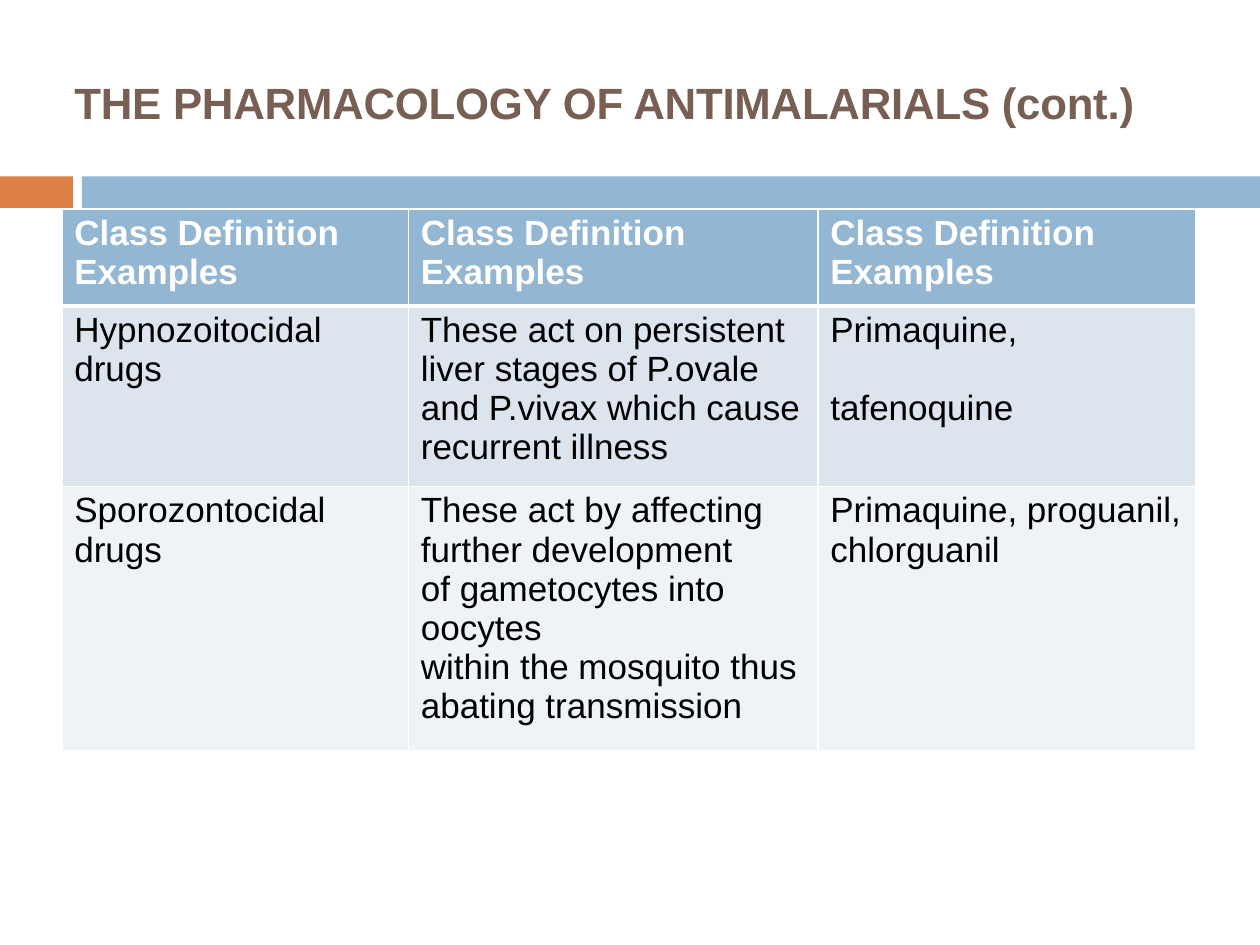
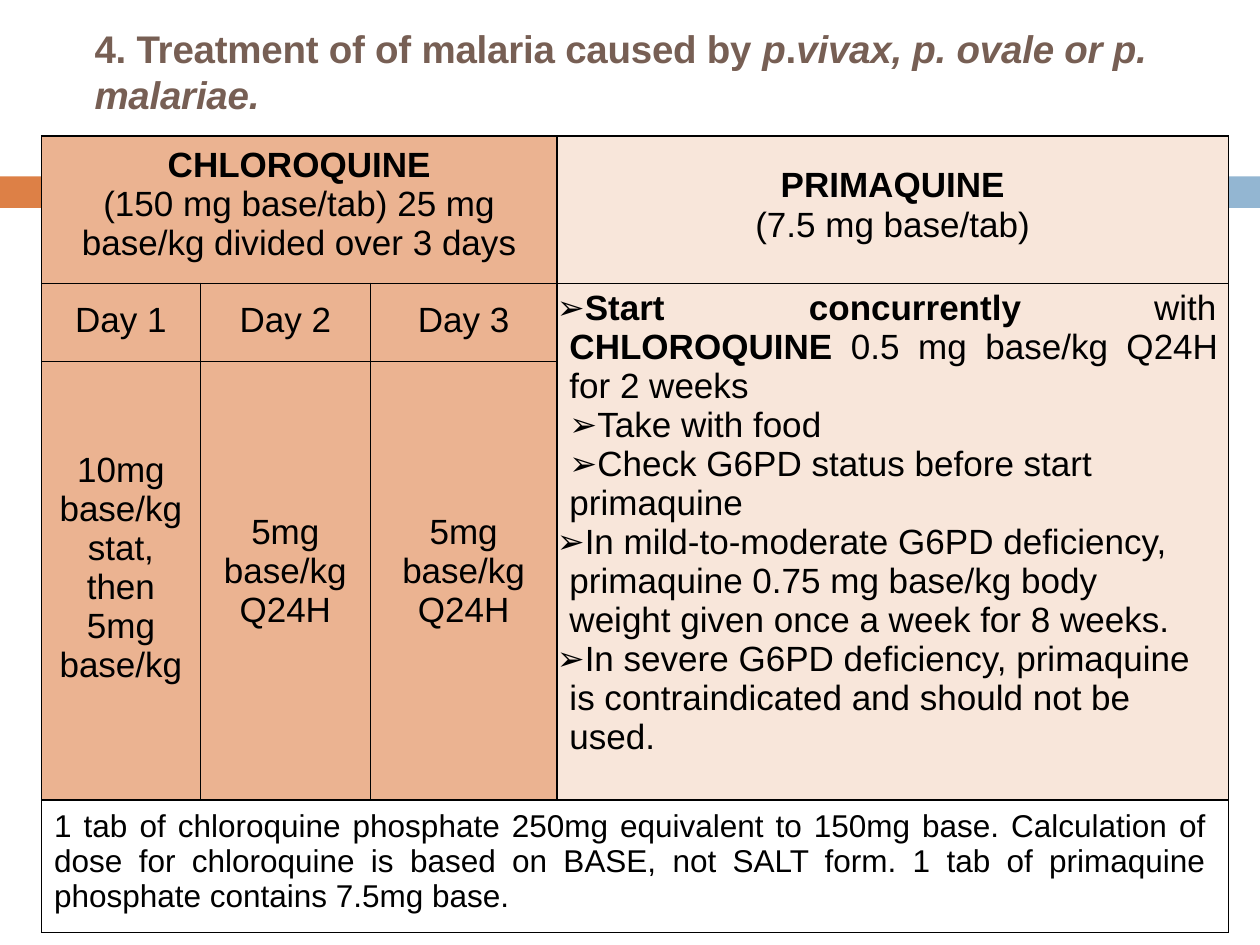
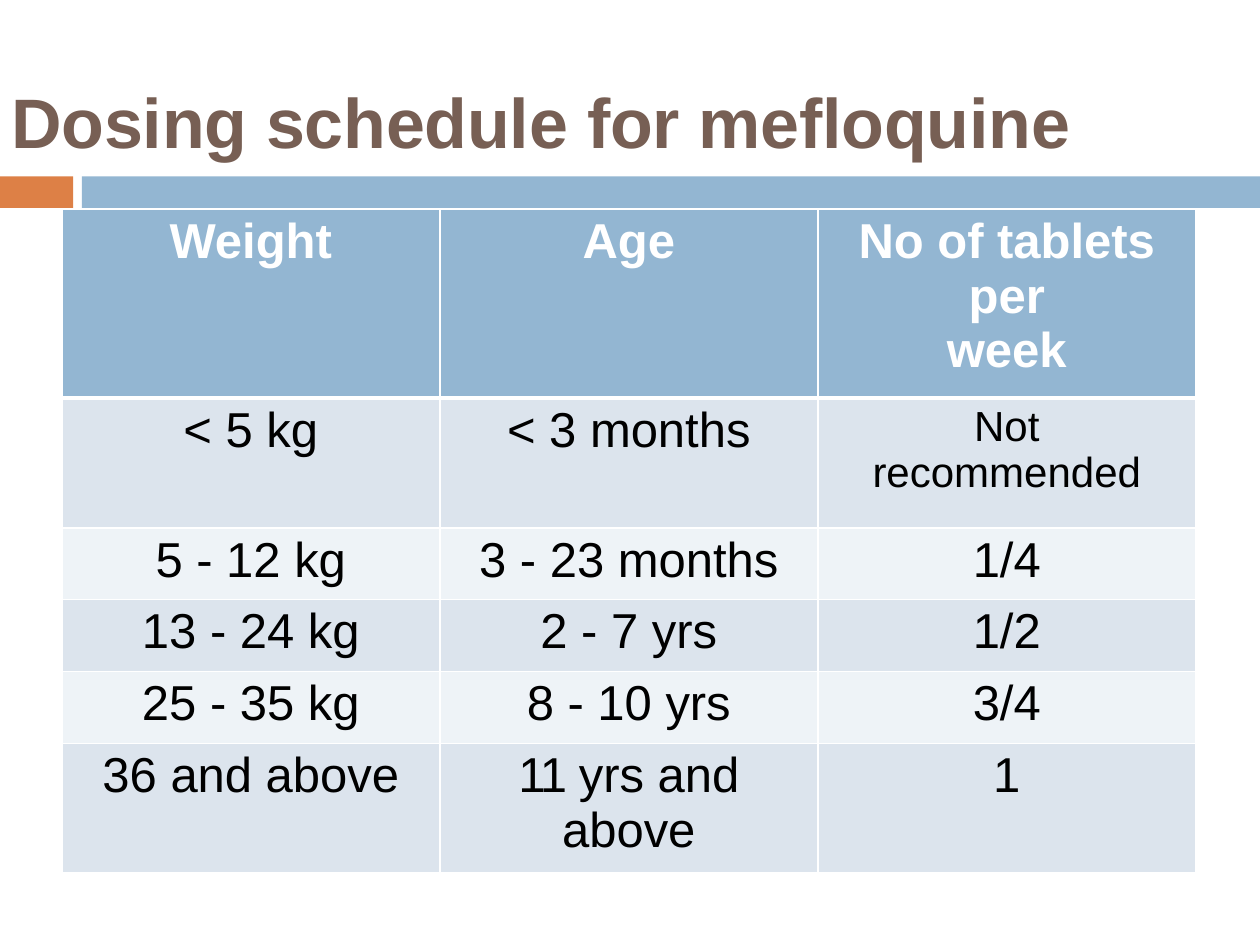
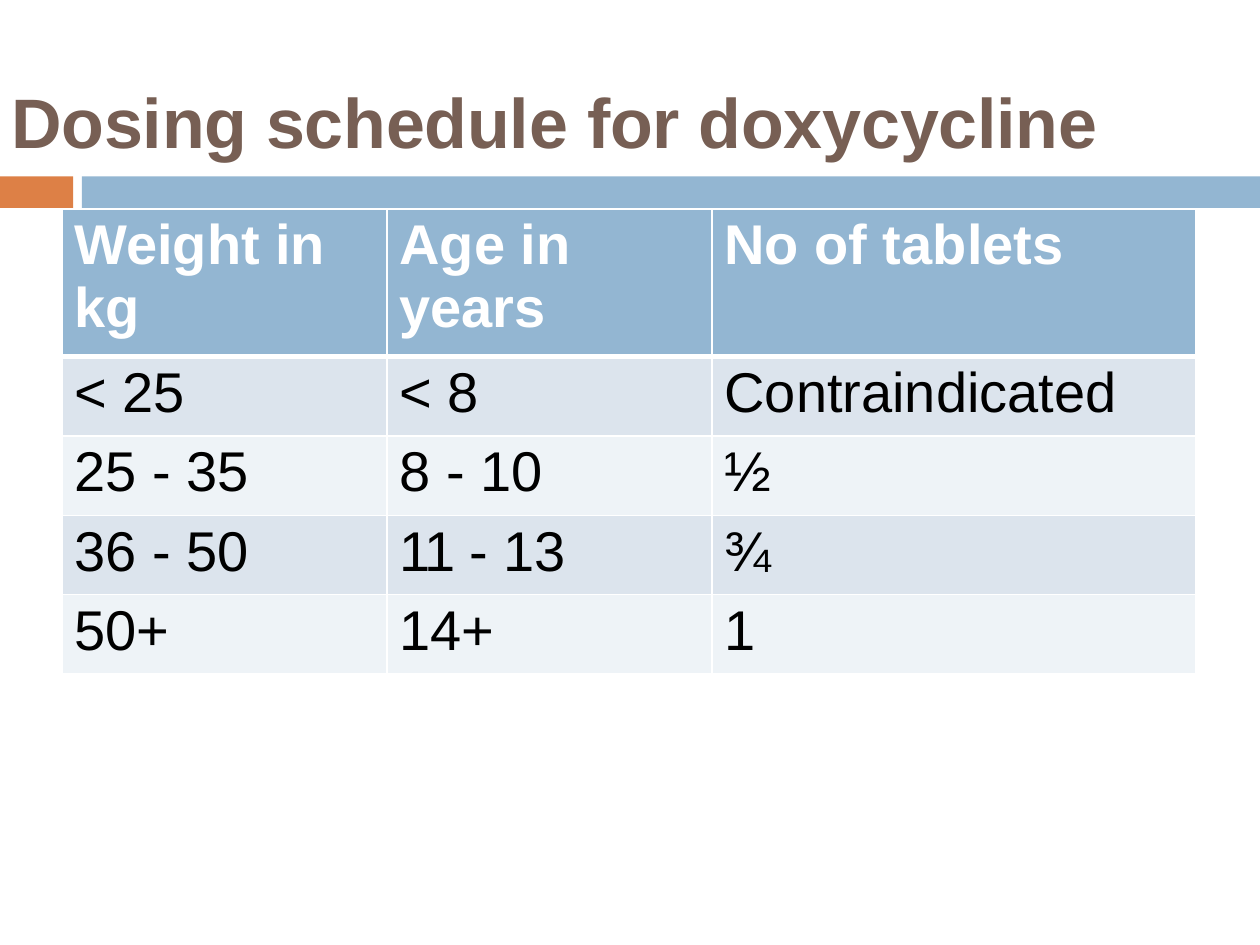
import dataclasses
import lxml.etree
import pptx
import pptx.dml.color
import pptx.enum.shapes
import pptx.enum.text
import pptx.oxml.ns
import pptx.util

RGB = pptx.dml.color.RGBColor
ALIGN = pptx.enum.text.PP_ALIGN
LEFT, MID, FULL = ALIGN.LEFT, ALIGN.CENTER, ALIGN.JUSTIFY

# Colours and type
BROWN = RGB(0x77, 0x5F, 0x54)
RUST = RGB(0xDD, 0x80, 0x46)
BLUE = RGB(0x93, 0xB6, 0xD2)
MIST = RGB(0xDC, 0xE4, 0xED)
PALE = RGB(0xEE, 0xF3, 0xF7)
PEACH = RGB(0xEB, 0xB3, 0x91)
CREAM = RGB(0xF8, 0xE6, 0xDA)
WHITE = RGB(0xFF, 0xFF, 0xFF)
BLACK = RGB(0, 0, 0)
FACE = "Arial"

# Grid: 100 columns by 75 rows
COLS, ROWS = 100, 75


@dataclasses.dataclass
class Para:
    """Runs are plain strings or (text, marks) pairs; b bold, i italic, t tight."""
    runs: list
    align: object = None
    left: float = 0
    first: float = 0
    before: float = 0
    mark: str = ""
    tabs: tuple = ()


@dataclasses.dataclass
class Cell:
    paras: list
    fill: object = WHITE
    size: float = 20
    color: object = BLACK
    bold: bool = False
    align: object = LEFT
    top: float = 0.4
    left: float = 0
    right: float = 0


def node(parent, tag, **attrs):
    return lxml.etree.SubElement(parent, pptx.oxml.ns.qn(tag), **attrs)


class Deck:
    def __init__(self):
        self.file = pptx.Presentation()
        self.file.slide_width = pptx.util.Inches(10)
        self.file.slide_height = pptx.util.Inches(7.5)
        self.slide = None

    def x(self, cols):
        return round(self.file.slide_width * cols / COLS)

    def y(self, rows):
        return round(self.file.slide_height * rows / ROWS)

    def box(self, left, top, wide, tall):
        return self.x(left), self.y(top), self.x(wide), self.y(tall)

    def start(self, split=5.8, blue=6.5):
        """Add a slide with its two bands; split ends the rust one."""
        self.slide = self.file.slides.add_slide(self.file.slide_layouts[5])
        self.band(0, split, RUST)
        self.band(blue, COLS - blue, BLUE)

    def band(self, left, wide, color):
        shape = self.slide.shapes.add_shape(
            pptx.enum.shapes.MSO_SHAPE.RECTANGLE, *self.box(left, 14, wide, 2.5))
        shape.shadow.inherit = False
        shape.fill.solid()
        shape.fill.fore_color.rgb = color
        shape.line.fill.background()

    def title(self, place, size, *paras):
        head = self.slide.shapes.title
        head.left, head.top, head.width, head.height = self.box(*place)
        frame = head.text_frame
        frame.word_wrap = True
        frame.auto_size = pptx.enum.text.MSO_AUTO_SIZE.NONE
        frame.vertical_anchor = pptx.enum.text.MSO_ANCHOR.TOP
        frame.margin_left = frame.margin_right = frame.margin_bottom = 0
        frame.margin_top = self.y(0.6)
        self.fill(frame, paras, size, BROWN, True, LEFT, -10)

    def fill(self, frame, paras, size, color, bold, align, space=0):
        for num, para in enumerate(paras):
            if not isinstance(para, Para):
                para = Para([para])
            line = frame.paragraphs[0] if num == 0 else frame.add_paragraph()
            line.alignment = align if para.align is None else para.align
            if para.before:
                line.space_before = pptx.util.Pt(para.before)
            self.indent(line, para)
            for part in para.runs:
                text, marks = (part, "") if isinstance(part, str) else part
                for row, words in enumerate(text.split("\n")):
                    if row:
                        line.add_line_break()
                    if words:
                        self.run(line, words, marks, size, color, bold, space)

    def run(self, line, words, marks, size, color, bold, space):
        run = line.add_run()
        run.text = words
        font = run.font
        font.name, font.size = FACE, pptx.util.Pt(size)
        font.bold, font.italic = bold or "b" in marks, "i" in marks
        font.color.rgb = color
        space = -110 if "t" in marks else space
        if space:
            font._element.set("spc", str(space))

    def indent(self, line, para):
        props = line._p.get_or_add_pPr()
        if para.left:
            props.set("marL", str(self.x(para.left)))
            props.set("indent", str(self.x(para.first)))
        if para.mark:
            node(props, "a:buSzPct", val="95000")
            node(props, "a:buFont", typeface=FACE)
            node(props, "a:buChar", char=para.mark)
        if para.tabs:
            stops = node(props, "a:tabLst")
            for stop in para.tabs:
                node(stops, "a:tab", pos=str(self.x(stop)), algn="l")

    def edge(self, cell, color, over=1, under=1):
        props = cell._tc.get_or_add_tcPr()
        for tag, width in (("L", 1), ("R", 1), ("T", over), ("B", under)):
            line = node(props, "a:ln" + tag, w=str(pptx.util.Pt(width)))
            paint = node(line, "a:solidFill")
            node(paint, "a:srgbClr", val=str(color))

    def table(self, left, top, cols, rows, cells, line, spans=(), rule=1):
        """Draw rows of Cell; rule is the weight of the line under row one."""
        frame = self.slide.shapes.add_table(
            len(rows), len(cols), *self.box(left, top, sum(cols), sum(rows)))
        grid = frame.table
        grid.first_row = grid.horz_banding = False
        for col, wide in zip(grid.columns, cols):
            col.width = self.x(wide)
        for row, tall in zip(grid.rows, rows):
            row.height = self.y(tall)
        for r, items in enumerate(cells):
            for c, item in enumerate(items):
                cell = grid.cell(r, c)
                cell.margin_left, cell.margin_right = self.x(item.left), self.x(item.right)
                cell.margin_top, cell.margin_bottom = self.y(item.top), 0
                self.edge(cell, line, rule if r == 1 else 1, rule if r == 0 else 1)
                cell.fill.solid()
                cell.fill.fore_color.rgb = item.fill
                self.fill(cell.text_frame, item.paras, item.size,
                          item.color, item.bold, item.align)
        for r, c, low, far in spans:
            grid.cell(r, c).merge(grid.cell(low, far))

    def banded(self, cols, rows, data, size, align=LEFT):
        """Blue header row over rows of alternating tint."""
        pad = 1 if align == LEFT else 0
        cells = []
        for r, items in enumerate(data):
            look = dict(fill=MIST if r % 2 else PALE)
            if r == 0:
                look = dict(fill=BLUE, color=WHITE, bold=True)
            look.update(size=size, align=align, left=pad)
            cells.append([dataclasses.replace(item, **{**look, "size": item.size})
                          if isinstance(item, Cell)
                          else Cell(item if isinstance(item, list) else [item], **look)
                          for item in items])
        self.table(4.9, 16.6, cols, rows, cells, WHITE, rule=3)


def classes(deck):
    deck.start()
    deck.title((5.9, 5.4, 85.1, 4.4), 25, "THE PHARMACOLOGY OF ANTIMALARIALS (cont.)")
    deck.banded((27.5, 32.5, 30), (7.7, 14.3, 21), [
        [["Class Definition", "Examples"]] * 3,
        ["Hypnozoitocidal\ndrugs",
         "These act on persistent\nliver stages of P.ovale\n"
         "and P.vivax which cause\nrecurrent illness",
         ["Primaquine,", Para(["tafenoquine"], before=22)]],
        ["Sporozontocidal\ndrugs",
         ["These act by affecting\nfurther development\nof gametocytes into\noocytes",
          "within the mosquito thus\nabating transmission"],
         "Primaquine, proguanil,\nchlorguanil"],
    ], 20)


def vivax(deck):
    deck.start(3.3, 97.5)
    deck.title((7.5, 1.4, 85, 7.6), 22,
               Para(["4. Treatment of of malaria caused by ", ("p", "i"), ".",
                     ("vivax, p. ovale or p.", "i")]),
               Para([("malariae.", "i")]))

    # Drug names, days and doses
    def dose(text, top):
        return Cell([text], PEACH, align=MID, top=top)

    chloro = Cell([Para([("CHLOROQUINE", "b")]), "(150 mg base/tab) 25 mg",
                   "base/kg divided over 3 days"], PEACH, align=MID, top=0.8)
    prima = Cell([Para([("PRIMAQUINE", "b")]), "(7.5 mg base/tab)"],
                 CREAM, align=MID, top=2.4)
    days = [dose(f"Day {n}", 1.4) for n in (1, 2, 3)]
    daily = "5mg\nbase/kg\nQ24H"
    doses = [dose("10mg\nbase/kg\nstat,\nthen\n5mg\nbase/kg", 7.1),
             dose(daily, 12), dose(daily, 12)]

    # Advice on primaquine
    wide = dict(left=1, first=-1, mark="➢")
    deep = dict(left=3.2, first=-2.2, mark="➢", tabs=(3.2,))
    advice = Cell([
        Para([("Start\tconcurrently\t", "b"), "with ", ("CHLOROQUINE", "b"),
              " 0.5 mg base/kg Q24H\nfor 2 weeks"],
             align=FULL, tabs=(20, 47.4), **wide),
        Para(["Take with food"], **deep),
        Para(["Check G6PD status before start"], **deep),
        Para(["primaquine"], left=1),
        Para(["In mild-to-moderate G6PD deficiency,\nprimaquine 0.75 mg base/kg body\n"
              "weight given once a week for 8 weeks."], **wide),
        Para(["In severe G6PD deficiency, primaquine\nis contraindicated and should "
              "not be\nused."], **wide),
    ], CREAM, right=0.8)
    note = Cell(["1 tab of chloroquine phosphate 250mg equivalent to 150mg base. "
                 "Calculation of dose for chloroquine is based on BASE, not SALT form. "
                 "1 tab of primaquine phosphate contains 7.5mg base."],
                size=18, align=FULL, top=0.7, left=1, right=1.8)
    bare, pale = Cell([], PEACH), Cell([], CREAM)
    deck.table(3.3, 10.8, (12.6, 13.5, 14.8, 53.3), (11.7, 6.2, 34.8, 10.5),
               [[chloro, bare, bare, prima], days + [advice], doses + [pale],
                [note] + [Cell([])] * 3],
               BLACK, spans=((0, 0, 0, 2), (1, 3, 2, 3), (3, 0, 3, 3)))


def mefloquine(deck):
    deck.start()
    deck.title((0.9, 5.6, 84.8, 6.9), 40, "Dosing schedule for mefloquine")
    deck.banded((30,) * 3, (15, 10.3, 5.7, 5.7, 5.7, 10.3), [
        ["Weight", "Age", "No of tablets\nper\nweek"],
        ["< 5 kg", "< 3 months", Cell(["Not\nrecommended"], size=24)],
        ["5 - 12 kg", "3 - 23 months", "1/4"],
        ["13 - 24 kg", "2 - 7 yrs", "1/2"],
        ["25 - 35 kg", "8 - 10 yrs", "3/4"],
        ["36 and above", Para([("11 ", "t"), "yrs and\nabove"]), "1"],
    ], 28, MID)


def doxycycline(deck):
    deck.start()
    deck.title((0.9, 5.6, 86.9, 6.9), 40, "Dosing schedule for doxycycline")
    deck.banded((25.8, 25.8, 38.4), (11.7,) + (6.3,) * 4, [
        ["Weight in\nkg", "Age in\nyears", "No of tablets"],
        ["< 25", "< 8", "Contraindicated"],
        ["25 - 35", "8 - 10", "½"],
        ["36 - 50", Para([("11 ", "t"), "- 13"]), "¾"],
        ["50+", "14+", "1"],
    ], 32)


def main():
    deck = Deck()
    for build in (classes, vivax, mefloquine, doxycycline):
        build(deck)
    deck.file.save("out.pptx")


if __name__ == "__main__":
    main()
